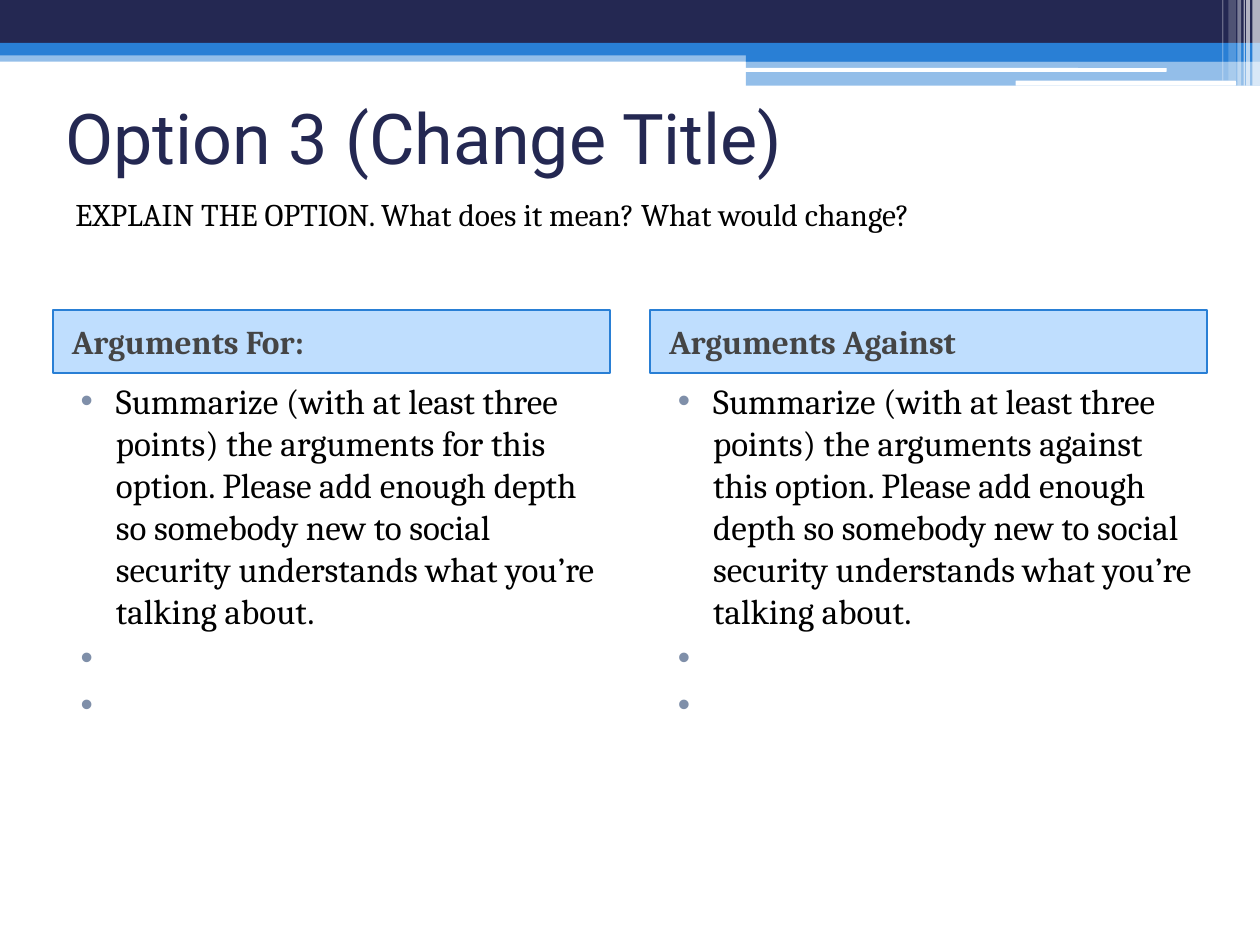
from lxml import etree
from pptx import Presentation
from pptx.dml.color import RGBColor
from pptx.enum.shapes import MSO_SHAPE
from pptx.enum.text import MSO_ANCHOR, MSO_AUTO_SIZE, PP_ALIGN
from pptx.oxml.ns import qn
from pptx.util import Inches, Pt

RECT, ROUND = MSO_SHAPE.RECTANGLE, MSO_SHAPE.ROUNDED_RECTANGLE
TOP, MIDDLE = MSO_ANCHOR.TOP, MSO_ANCHOR.MIDDLE
LEFT = PP_ALIGN.LEFT
NO_FIT, GROW = MSO_AUTO_SIZE.NONE, MSO_AUTO_SIZE.SHAPE_TO_FIT_TEXT
COMPARISON = 4

NAVY, BLUE, WHITE, BLACK = "242852", "297FD5", "FFFFFF", "000000"
SKY, GREY, BULLET = "007FFE", "454545", "7F8FA9"
HEADING_FONT, BODY_FONT = "Roboto", "Cambria"


def color(value):
    return RGBColor.from_string(value)


class SlideBuilder:
    def __init__(self, slide):
        self.slide = slide

    def fill(self, shape, value, opacity=100):
        shape.fill.solid()
        shape.fill.fore_color.rgb = color(value)
        if opacity < 100:
            tint = shape.element.spPr.find(".//" + qn("a:srgbClr"))
            etree.SubElement(tint, qn("a:alpha"), val=str(opacity * 1000))

    def band(self, place, value, opacity=100, kind=RECT):
        shape = self.slide.shapes.add_shape(kind, *map(Inches, place))
        shape.shadow.inherit = False
        self.fill(shape, value, opacity)
        shape.line.fill.background()

    def placeholder(self, index, place):
        """Move a placeholder to its place, in front of the bands."""
        box = self.slide.placeholders[index]
        box.left, box.top, box.width, box.height = map(Inches, place)
        box.element.getparent().append(box.element)
        return box

    def set_text(self, box, text, size, value, font=BODY_FONT, bold=False,
                 anchor=TOP, fit=NO_FIT):
        frame = box.text_frame
        frame.text = text
        frame.word_wrap = True
        frame.auto_size = fit
        frame.vertical_anchor = anchor
        for para in frame.paragraphs:
            para.alignment = LEFT
            for span in para.runs:
                span.font.size = Pt(size)
                span.font.name = font
                span.font.bold = bold
                span.font.color.rgb = color(value)

    def indent(self, para, margin, first=0):
        para.space_before = Pt(3)
        properties = para._p.get_or_add_pPr()
        properties.set("marL", str(Inches(margin)))
        properties.set("indent", str(Inches(first)))
        return properties

    def title(self, text, place):
        box = self.placeholder(0, place)
        self.set_text(box, text, 40, NAVY, HEADING_FONT, anchor=MIDDLE)

    def header(self, index, text, place):
        box = self.placeholder(index, place)
        self.fill(box, SKY, 25)
        box.line.color.rgb = color(BLUE)
        box.line.width = Pt(1)
        self.set_text(box, text, 19, GREY, bold=True, anchor=MIDDLE)
        self.indent(box.text_frame.paragraphs[0], 0.05)

    def bullets(self, index, items, place):
        box = self.placeholder(index, place)
        self.set_text(box, "\n".join(items), 20, BLACK)
        for para in box.text_frame.paragraphs:
            properties = self.indent(para, 0.4, -0.28)
            tint = etree.SubElement(properties, qn("a:buClr"))
            etree.SubElement(tint, qn("a:srgbClr"), val=BULLET)
            etree.SubElement(properties, qn("a:buFont"), typeface="Arial")
            etree.SubElement(properties, qn("a:buChar"), char="•")

    def text(self, text, place):
        box = self.slide.shapes.add_textbox(*map(Inches, place))
        self.set_text(box, text, 18, BLACK, fit=GROW)


def main():
    deck = Presentation()
    deck.slide_width, deck.slide_height = Inches(10), Inches(7.5)
    builder = SlideBuilder(deck.slides.add_slide(deck.slide_layouts[COMPARISON]))

    # Bands across the top
    builder.band((0, 0.4, 10, 0.09), BLUE, 50)
    builder.band((0, 0, 10, 0.34), NAVY)
    builder.band((0, 0.34, 10, 0.1), BLUE)
    builder.band((5.92, 0.39, 4.08, 0.1), BLUE)
    builder.band((5.92, 0.48, 4.08, 0.2), BLUE, 50)
    builder.band((5.91, 0.54, 3.35, 0.03), WHITE, kind=ROUND)
    builder.band((8.06, 0.64, 1.75, 0.04), WHITE, kind=ROUND)

    # Pale stripes in the corner: left, width, height, opacity
    for left, width, height, opacity in (
        (9.94, 0.06, 0.68, 65), (9.89, 0.03, 0.68, 65), (9.87, 0.01, 0.68, 60),
        (9.82, 0.03, 0.68, 40), (9.75, 0.06, 0.64, 20), (9.7, 0.01, 0.64, 30),
    ):
        builder.band((left, 0, width, height), WHITE, opacity)

    # Title
    builder.title("Option 3 (Change Title)", (0.42, 0.5, 9.17, 1.17))

    # Two columns of arguments, each with two open points
    columns = (("Arguments For:", "for"), ("Arguments Against", "against"))
    for number, (heading, side) in enumerate(columns):
        left = 0.42 + number * 4.74
        summary = (
            f"Summarize (with at least three points) the arguments {side} this "
            "option. Please add enough depth so somebody new to social security "
            "understands what you’re talking about."
        )
        builder.header(1 + 2 * number, heading, (left, 2.46, 4.42, 0.5))
        builder.bullets(2 + 2 * number, (summary, " ", " "),
                        (left, 2.96, 4.42, 4.25))

    # Explanation below the title
    builder.text("EXPLAIN THE OPTION. What does it mean? What would change?",
                 (0.5, 1.5, 7.17, 0.71))

    deck.save("out.pptx")


if __name__ == "__main__":
    main()
